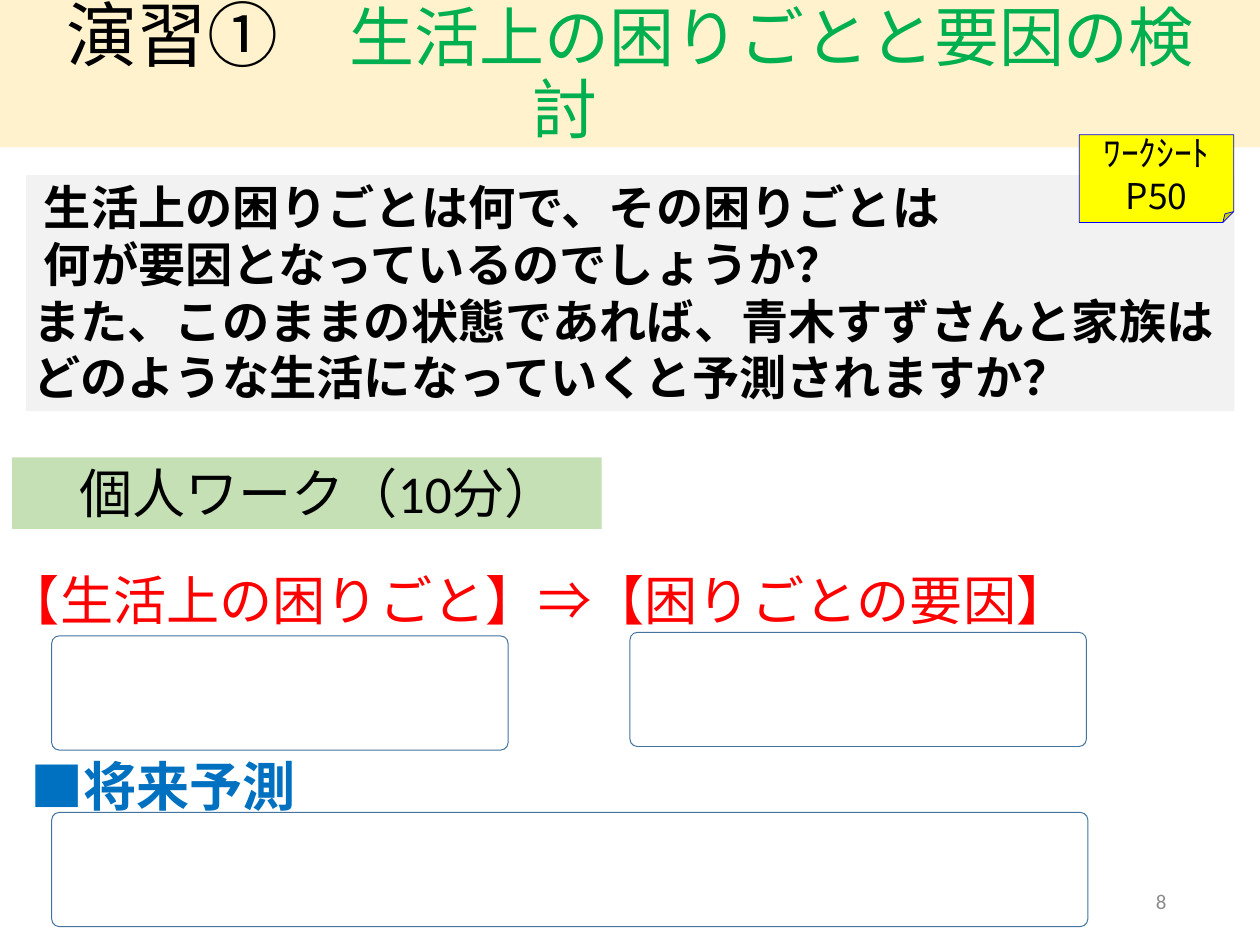
from dataclasses import dataclass

from pptx import Presentation
from pptx import util as u
from pptx.dml.color import RGBColor
from pptx.enum import shapes, text

PRESET = shapes.MSO_SHAPE
ALIGN = text.PP_ALIGN
MIDDLE = text.MSO_ANCHOR.MIDDLE


@dataclass
class Panel:
    left: float
    top: float
    width: float
    height: float
    fill: str | None = None
    line: str | None = None
    weight: float = 1
    preset: shapes.MSO_SHAPE = PRESET.RECTANGLE
    corner: float | None = None


def color(value: str) -> RGBColor:
    return RGBColor.from_string(value)


def add_panel(page, panel: Panel):
    place = [u.Inches(n) for n in (panel.left, panel.top, panel.width, panel.height)]
    if panel.fill is None:
        return page.shapes.add_textbox(*place)
    box = page.shapes.add_shape(panel.preset, *place)
    box.shadow.inherit = False
    box.fill.solid()
    box.fill.fore_color.rgb = color(panel.fill)
    if panel.line:
        box.line.color.rgb = color(panel.line)
        box.line.width = u.Pt(panel.weight)
    else:
        box.line.fill.background()
    if panel.corner is not None:
        geometry = box._element.spPr.prstGeom
        geometry.rewrite_guides([("adj", round(panel.corner * 100000))])
    return box


def set_frame(box, *, anchor=text.MSO_ANCHOR.TOP, wrap: bool = True,
              grow: bool = False, insets=(0.1, 0.05, 0.1, 0.05)):
    frame = box.text_frame
    frame.word_wrap = wrap
    frame.auto_size = (text.MSO_AUTO_SIZE.SHAPE_TO_FIT_TEXT if grow
                       else text.MSO_AUTO_SIZE.NONE)
    frame.vertical_anchor = anchor
    (frame.margin_left, frame.margin_top,
     frame.margin_right, frame.margin_bottom) = map(u.Inches, insets)
    return frame


def add_para(frame, *, align=ALIGN.LEFT, indent: float = 0, spacing: float | None = None):
    para = frame.paragraphs[0]
    if para.runs:
        para = frame.add_paragraph()
    para.alignment = align
    if spacing:
        para.line_spacing = spacing
    if indent:
        properties = para._p.get_or_add_pPr()
        properties.set("marL", "0")
        properties.set("indent", str(int(u.Inches(indent))))
    return para


def add_span(para, words: str, *, size: float, ink: str = "000000",
             font: str = "Calibri", bold: bool = False) -> None:
    span = para.add_run()
    span.text = words
    span.font.size = u.Pt(size)
    span.font.name = font
    span.font.bold = bold
    span.font.color.rgb = color(ink)


def add_heading(page, panel: Panel, words: str, *, ink: str, bold: bool = False) -> None:
    frame = set_frame(add_panel(page, panel), wrap=False, grow=True)
    add_span(add_para(frame), words, size=54, ink=ink, bold=bold)


def answer_box(left: float, top: float, width: float) -> Panel:
    return Panel(left, top, width, 1.61, "FFFFFF", "43739E",
                 preset=PRESET.ROUNDED_RECTANGLE, corner=0.065)


def main() -> None:
    deck = Presentation()
    deck.slide_width, deck.slide_height = u.Inches(17.78), u.Inches(13.33)
    page = deck.slides.add_slide(deck.slide_layouts[6])

    title = set_frame(add_panel(page, Panel(0, 0, 17.78, 2.08, "FFF2CC")), anchor=MIDDLE)
    para = add_para(title, align=ALIGN.CENTER, spacing=0.9)
    add_span(para, "演習①　", size=72)
    add_span(para, "生活上の困りごとと要因の検討　　", size=66, ink="00B050")

    number = set_frame(add_panel(page, Panel(12.56, 12.36, 4, 0.71)), anchor=MIDDLE)
    add_span(add_para(number, align=ALIGN.RIGHT), "8", size=21.3, ink="8C8C8C")

    question = set_frame(add_panel(page, Panel(0.37, 2.47, 17.05, 3.33, "F2F2F2")), grow=True)
    for words in ("生活上の困りごとは何で、その困りごとは",
                  "何が要因となっているのでしょうか？"):
        para = add_para(question, align=ALIGN.JUSTIFY, indent=0.15)
        add_span(para, words, size=48, font="Cambria", bold=True)
    add_span(add_para(question),
             "また、このままの状態であれば、青木すずさんと家族はどのような生活になっていくと予測されますか？",
             size=48, bold=True)

    add_heading(page, Panel(0, 7.96, 15.35, 1.01),
                "【生活上の困りごと】⇒【困りごとの要因】", ink="FF0000")
    add_heading(page, Panel(0.33, 10.58, 4.01, 1.01), "■将来予測", ink="0070C0", bold=True)

    work = set_frame(add_panel(page, Panel(0.17, 6.45, 8.32, 1.01, "C5E0B4")),
                     grow=True, insets=(0.43, 0.05, 0.1, 0.05))
    add_span(add_para(work, align=ALIGN.CENTER), "個人ワーク（10分）", size=54)

    for left, top, width in ((0.73, 8.97, 6.44), (8.89, 8.92, 6.44), (0.73, 11.46, 14.62)):
        add_panel(page, answer_box(left, top, width))

    note = Panel(15.23, 1.9, 2.18, 1.24, "FFFF00", "0000FF", 0.75,
                 PRESET.FOLDED_CORNER, 0.125)
    worksheet = set_frame(add_panel(page, note), anchor=MIDDLE, insets=(0, 0.03, 0, 0.01))
    for words in ("ﾜｰｸｼｰﾄ", "P50"):
        add_span(add_para(worksheet, align=ALIGN.CENTER), words,
                 size=36, font="Noto Sans CJK JP")

    deck.save("out.pptx")


if __name__ == "__main__":
    main()
